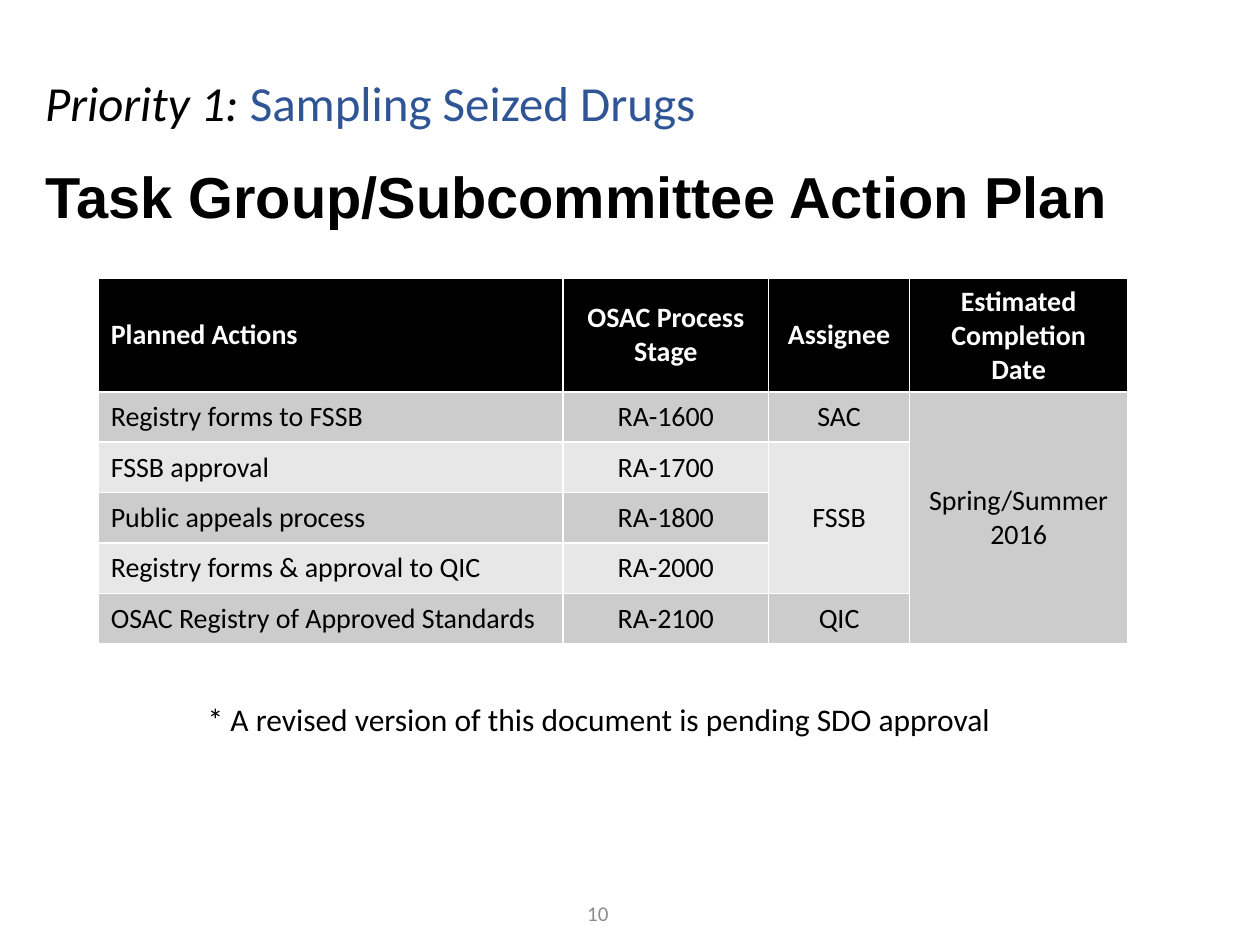
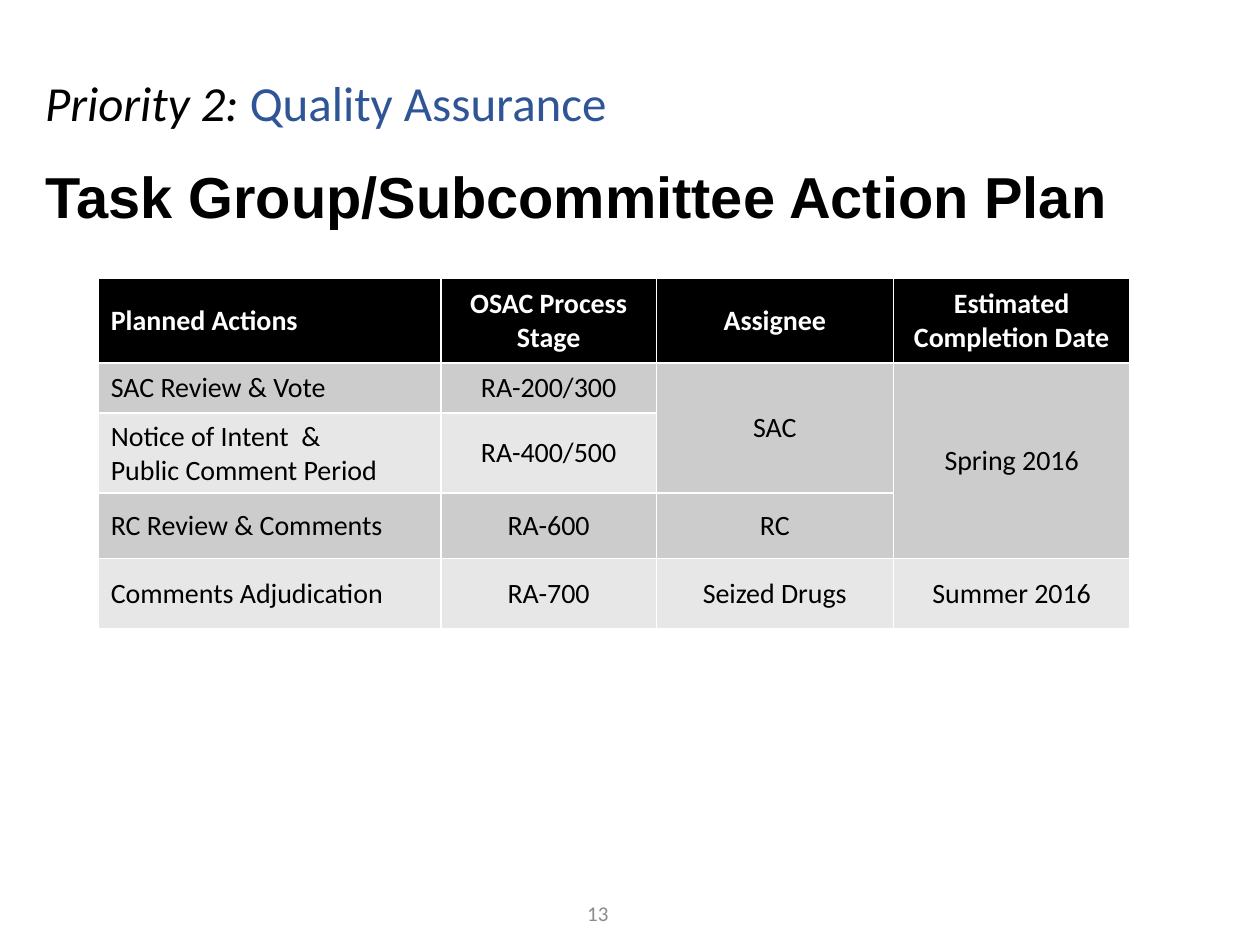
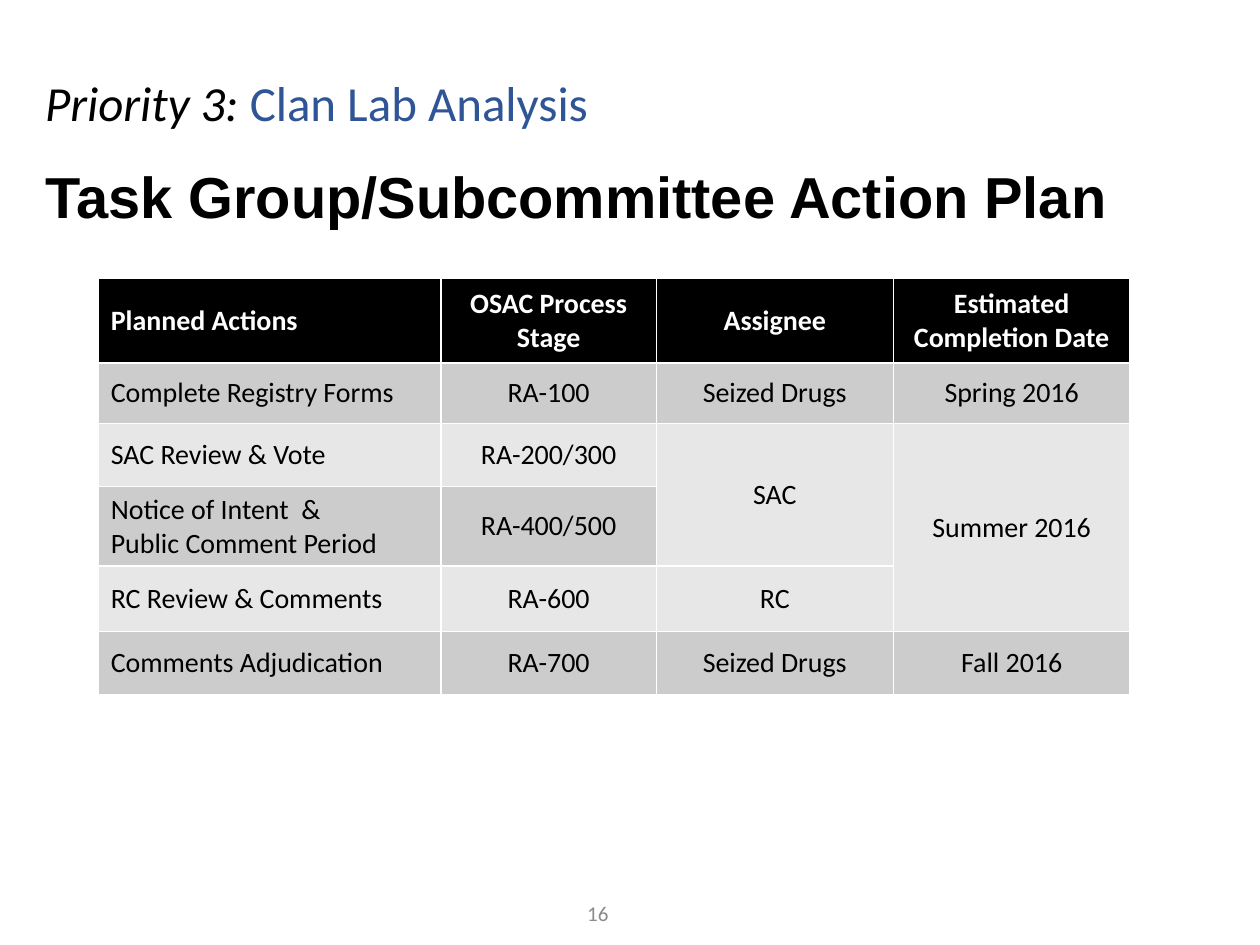
from pptx import Presentation
from pptx.dml.color import RGBColor
from pptx.enum.text import MSO_ANCHOR, MSO_AUTO_SIZE, PP_ALIGN
from pptx.util import Inches, Pt

LEFT, CENTER = PP_ALIGN.LEFT, PP_ALIGN.CENTER
TOP, MIDDLE = MSO_ANCHOR.TOP, MSO_ANCHOR.MIDDLE
NO_FIT = MSO_AUTO_SIZE.NONE

COLORS = {"black": "000000", "white": "FFFFFF", "topic": "2F5597",
          "number": "8C8C8C", "odd": "CCCCCC", "even": "E7E7E7"}
TITLE = "Task Group/Subcommittee Action Plan"
HEADER = ["Planned Actions", "OSAC Process Stage", "Assignee",
          "Estimated Completion Date"]
HEADER_HEIGHT = 0.67

# None continues the cell above it
PLANS = [
    {"number": "10", "priority": "Priority 1: ", "topic": "Sampling Seized Drugs",
     "note": "* A revised version of this document is pending SDO approval",
     "columns": [3.69, 1.63, 1.12, 1.73],
     "heights": [0.4] * 5,
     "rows": [
         ["Registry forms to FSSB", "RA-1600", "SAC", "Spring/Summer 2016"],
         ["FSSB approval", "RA-1700", "FSSB", None],
         ["Public appeals process", "RA-1800", None, None],
         ["Registry forms & approval to QIC", "RA-2000", None, None],
         ["OSAC Registry of Approved Standards", "RA-2100", "QIC", None]]},
    {"number": "13", "priority": "Priority 2: ", "topic": "Quality Assurance",
     "columns": [2.72, 1.71, 1.88, 1.88],
     "heights": [0.4, 0.52, 0.52, 0.56],
     "rows": [
         ["SAC Review & Vote", "RA-200/300", "SAC", "Spring 2016"],
         ["Notice of Intent  &\nPublic Comment Period", "RA-400/500", None, None],
         ["RC Review & Comments", "RA-600", "RC", None],
         ["Comments Adjudication", "RA-700", "Seized Drugs", "Summer 2016"]]},
    {"number": "16", "priority": "Priority 3: ", "topic": "Clan Lab Analysis",
     "columns": [2.72, 1.71, 1.88, 1.88],
     "heights": [0.48, 0.5, 0.52, 0.52, 0.5],
     "rows": [
         ["Complete Registry Forms", "RA-100", "Seized Drugs", "Spring 2016"],
         ["SAC Review & Vote", "RA-200/300", "SAC", "Summer 2016"],
         ["Notice of Intent  &\nPublic Comment Period", "RA-400/500", None, None],
         ["RC Review & Comments", "RA-600", "RC", None],
         ["Comments Adjudication", "RA-700", "Seized Drugs", "Fall 2016"]]},
]


def add_run(p, text, size, color, bold=False, italic=False, font="Calibri"):
    r = p.add_run()
    r.text = text
    r.font.name = font
    r.font.size = Pt(size)
    r.font.bold = bold
    r.font.italic = italic
    r.font.color.rgb = RGBColor.from_string(COLORS[color])


def add_box(s, left, top, width, height, align=LEFT, anchor=TOP):
    box = s.shapes.add_textbox(Inches(left), Inches(top), Inches(width), Inches(height))
    tf = box.text_frame
    tf.word_wrap = True
    tf.vertical_anchor = anchor
    p = tf.paragraphs[0]
    p.alignment = align
    return p


prs = Presentation()
prs.slide_width, prs.slide_height = Inches(10), Inches(7.5)

for plan in PLANS:
    s = prs.slides.add_slide(prs.slide_layouts[5])

    # Title
    title = s.shapes.title
    title.left, title.top = Inches(0.26), Inches(0.94)
    title.width, title.height = Inches(9.36), Inches(1.29)
    tf = title.text_frame
    tf.auto_size = NO_FIT
    tf.vertical_anchor = MIDDLE
    p = tf.paragraphs[0]
    p.alignment = LEFT
    p.line_spacing = 0.9
    add_run(p, TITLE, 33, "black", bold=True, font="Arial")

    # Priority line
    p = add_box(s, 0.26, 0.53, 8.2, 0.57)
    add_run(p, plan["priority"], 28, "black", italic=True)
    add_run(p, plan["topic"], 28, "topic")

    # Action table; the default table style draws the white grid
    rows = [HEADER] + plan["rows"]
    heights = [HEADER_HEIGHT] + plan["heights"]
    table = s.shapes.add_table(len(rows), len(HEADER), Inches(0.78), Inches(2.21),
                               Inches(sum(plan["columns"])), Inches(sum(heights))).table
    for col, width in zip(table.columns, plan["columns"]):
        col.width = Inches(width)
    for i, row in enumerate(rows):
        table.rows[i].height = Inches(heights[i])
        band = "black" if i == 0 else "odd" if i % 2 else "even"
        for j, text in enumerate(row):
            if text is None:
                continue
            cell = table.cell(i, j)
            last = i
            while last + 1 < len(rows) and rows[last + 1][j] is None:
                last += 1
            if last > i:
                cell.merge(table.cell(last, j))
            cell.fill.solid()
            cell.fill.fore_color.rgb = RGBColor.from_string(COLORS[band])
            cell.vertical_anchor = MIDDLE
            tf = cell.text_frame
            for k, line in enumerate(text.split("\n")):
                p = tf.add_paragraph() if k else tf.paragraphs[0]
                p.alignment = CENTER if j else LEFT
                add_run(p, line, 16, "black" if i else "white", bold=i == 0)

    # Footnote
    if "note" in plan:
        add_run(add_box(s, 1.55, 5.51, 6.54, 0.4), plan["note"], 18, "black")

    # Slide number
    p = add_box(s, 3.62, 7.05, 2.25, 0.4, CENTER, MIDDLE)
    add_run(p, plan["number"], 12, "number")

prs.save("out.pptx")
